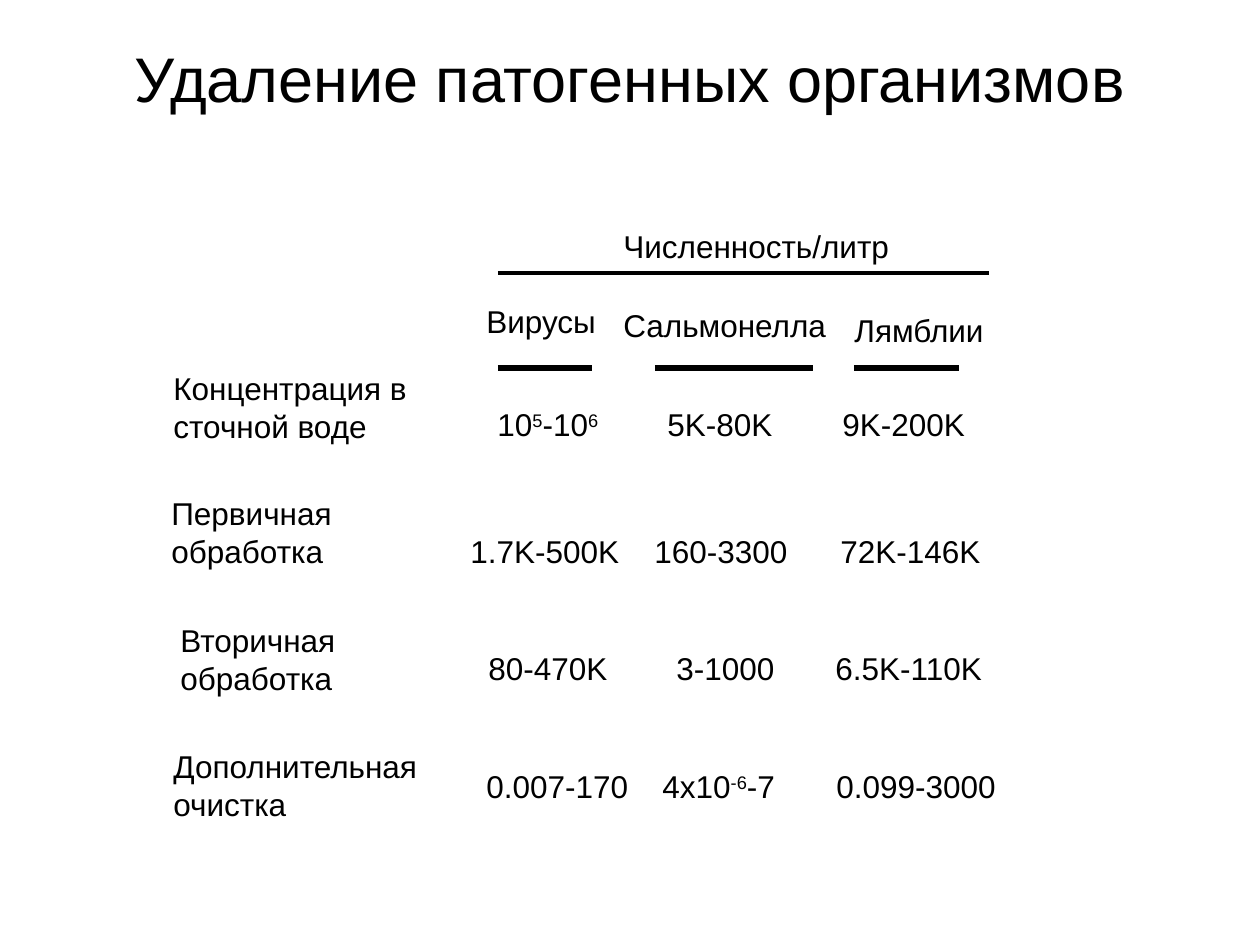
from dataclasses import dataclass

from lxml import etree
from pptx import Presentation
from pptx.dml.color import RGBColor
from pptx.enum.shapes import MSO_CONNECTOR
from pptx.enum.text import MSO_ANCHOR, MSO_AUTO_SIZE, PP_ALIGN
from pptx.oxml.ns import qn
from pptx.util import Emu, Pt

EMU_PER_PX = 914400 / 126
STRAIGHT = MSO_CONNECTOR.STRAIGHT
LEFT, CENTER = PP_ALIGN.LEFT, PP_ALIGN.CENTER
TOP, MIDDLE = MSO_ANCHOR.TOP, MSO_ANCHOR.MIDDLE
FIT_SHAPE = MSO_AUTO_SIZE.SHAPE_TO_FIT_TEXT
BLANK_LAYOUT = 6


@dataclass(frozen=True)
class Theme:
    font: str = "Arial"
    ink: RGBColor = RGBColor(0, 0, 0)
    title_size: int = 36
    body_size: int = 18
    header_rule: float = 2.25
    column_rule: float = 3


THEME = Theme()
LINE_HEIGHT, TWO_LINES = 50, 89

# left, top, width, text
HEADINGS = [
    (611, 221, 294, "Численность/литр"),
    (474, 296, 136, "Вирусы"),
    (611, 300, 231, "Сальмонелла"),
    (842, 305, 156, "Лямблии"),
]
# left, top, width, text, wraps
ROW_LABELS = [
    (161, 363, 281, "Концентрация в сточной воде", True),
    (168, 615, 190, "Вторичная\nобработка", False),
    (161, 741, 271, "Дополнительная очистка", True),
]
# left, top, width, height, text, tab stops; ^ encloses a superscript
VALUE_ROWS = [
    (485, 399, 519, LINE_HEIGHT, "10^5^-10^6^\t5K-80K\t9K-200K", (170, 345)),
    (159, 488, 922, TWO_LINES,
     "Первичная\nобработка\t1.7K-500K\t160-3300\t72K-146K", (299, 483, 669)),
    (476, 643, 523, LINE_HEIGHT, "80-470K\t3-1000\t6.5K-110K", (188, 347)),
    (474, 761, 538, LINE_HEIGHT, "0.007-170\t4x10^-6^-7\t0.099-3000", (176, 350)),
]
# left, right, y, weight
RULES = [
    (498, 989, 273, THEME.header_rule),
    (498, 592, 368, THEME.column_rule),
    (655, 813, 368, THEME.column_rule),
    (854, 959, 368, THEME.column_rule),
]


def px(length):
    return Emu(round(length * EMU_PER_PX))


def set_tab_stops(paragraph, stops):
    tab_list = etree.SubElement(paragraph._p.get_or_add_pPr(), qn("a:tabLst"))
    for stop in stops:
        etree.SubElement(tab_list, qn("a:tab"), pos=str(px(stop)), algn="l")


def add_runs(paragraph, text, size):
    """Write the text, raising each part enclosed in ^ signs."""
    for index, part in enumerate(text.split("^")):
        if not part:
            continue
        run = paragraph.add_run()
        run.text = part
        run.font.name = THEME.font
        run.font.size = Pt(size)
        run.font.color.rgb = THEME.ink
        if index % 2:
            run._r.get_or_add_rPr().set("baseline", "30000")


def add_text(slide, text, left, top, width, height, *, size=THEME.body_size,
             align=LEFT, anchor=TOP, wrap=False, tabs=()):
    shape = slide.shapes.add_textbox(px(left), px(top), px(width), px(height))
    frame = shape.text_frame
    frame.word_wrap = wrap
    frame.vertical_anchor = anchor
    if anchor == TOP:
        frame.auto_size = FIT_SHAPE
    for index, line in enumerate(text.split("\n")):
        paragraph = frame.add_paragraph() if index else frame.paragraphs[0]
        paragraph.alignment = align
        if tabs:
            set_tab_stops(paragraph, tabs)
        add_runs(paragraph, line, size)


def add_rule(slide, left, right, y, weight):
    rule = slide.shapes.add_connector(STRAIGHT, px(left), px(y), px(right), px(y))
    rule.line.color.rgb = THEME.ink
    rule.line.width = Pt(weight)
    etree.SubElement(rule._element.spPr, qn("a:effectLst"))


def main():
    presentation = Presentation()
    presentation.slide_width, presentation.slide_height = px(1260), px(945)
    slide = presentation.slides.add_slide(presentation.slide_layouts[BLANK_LAYOUT])

    add_text(slide, "Удаление патогенных организмов", 63, 28, 1134, 98,
             size=THEME.title_size, align=CENTER, anchor=MIDDLE, wrap=True)
    for left, top, width, text in HEADINGS:
        add_text(slide, text, left, top, width, LINE_HEIGHT)
    for rule in RULES:
        add_rule(slide, *rule)
    for left, top, width, text, wraps in ROW_LABELS:
        add_text(slide, text, left, top, width, TWO_LINES, wrap=wraps)
    for left, top, width, height, text, tabs in VALUE_ROWS:
        add_text(slide, text, left, top, width, height, tabs=tabs)

    presentation.save("out.pptx")


if __name__ == "__main__":
    main()
